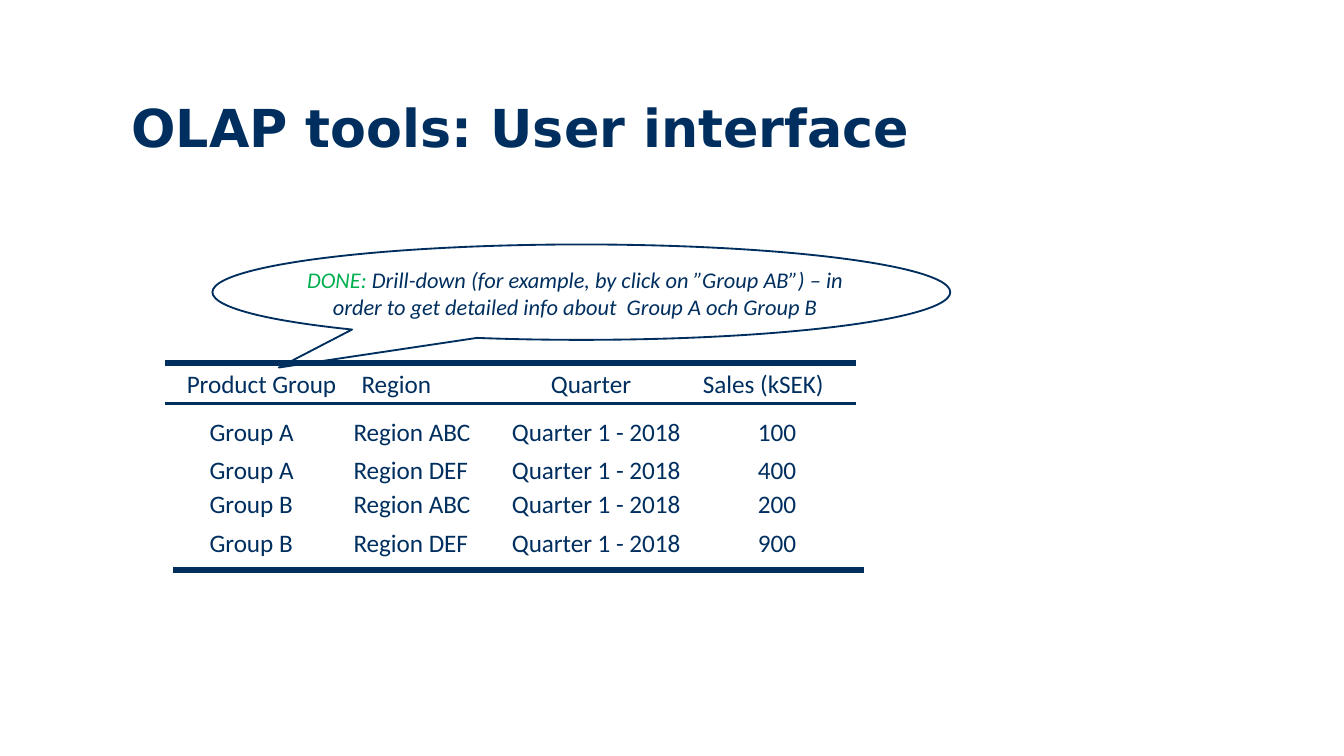
"""Build the OLAP user interface slide with a sales table and a drill-down callout."""

from dataclasses import dataclass

from lxml.etree import SubElement
from pptx import Presentation
from pptx.dml.color import RGBColor
from pptx.enum.shapes import MSO_CONNECTOR, MSO_SHAPE
from pptx.enum.text import MSO_ANCHOR, PP_ALIGN
from pptx.oxml.ns import qn
from pptx.slide import Slide
from pptx.util import Pt


@dataclass(frozen=True)
class Theme:
    ink: RGBColor = RGBColor(0x00, 0x2F, 0x5F)
    rule: RGBColor = RGBColor(0x00, 0x2E, 0x5D)
    done: RGBColor = RGBColor(0x00, 0xB0, 0x50)
    paper: RGBColor = RGBColor(0xFF, 0xFF, 0xFF)
    title_font: str = "DejaVu Sans"
    body_font: str = "Calibri"
    title_size: float = 28
    table_size: float = 13.5
    callout_size: float = 12


@dataclass(frozen=True)
class Box:
    left: float
    top: float
    width: float
    height: float

    def lengths(self) -> tuple[Pt, Pt, Pt, Pt]:
        return Pt(self.left), Pt(self.top), Pt(self.width), Pt(self.height)


@dataclass(frozen=True)
class Run:
    text: str
    color: RGBColor
    size: float
    font: str
    bold: bool = False
    italic: bool = False


@dataclass(frozen=True)
class Column:
    heading: str
    values: tuple[str, ...]
    width: float
    heading_indent: float
    value_indent: float


@dataclass(frozen=True)
class Rule:
    left: float
    top: float
    weight: float


THEME = Theme()
TABLE_LEFT, TABLE_TOP = 88.6, 194.4
ROW_HEIGHTS = (20.1, 25.9, 20.2, 18, 20.9)
COLUMNS = (
    Column("Product Group", ("Group A", "Group A", "Group B", "Group B"), 93.4, 11.5, 23.7),
    Column("Region", ("Region ABC", "Region DEF") * 2, 85, 11.7, 7.4),
    Column("Quarter", ("Quarter 1 - 2018",) * 4, 102.4, 28.2, 7.3),
    Column("Sales (kSEK)", ("100", "400", "200", "900"), 89.2, 7.2, 36.7),
)
RULE_WIDTH = 370
RULES = (Rule(88.6, 194.4, 3), Rule(92.9, 305.3, 3), Rule(88.6, 216, 1.5))


def write_runs(paragraph, runs: tuple[Run, ...]) -> None:
    for item in runs:
        run = paragraph.add_run()
        run.text = item.text
        run.font.name = item.font
        run.font.size = Pt(item.size)
        run.font.bold = item.bold
        run.font.italic = item.italic
        run.font.color.rgb = item.color


def add_text(slide: Slide, box: Box, runs: tuple[Run, ...], alignment: PP_ALIGN) -> None:
    text_frame = slide.shapes.add_textbox(*box.lengths()).text_frame
    text_frame.word_wrap = True
    text_frame.vertical_anchor = MSO_ANCHOR.MIDDLE
    paragraph = text_frame.paragraphs[0]
    paragraph.alignment = alignment
    write_runs(paragraph, runs)


def add_sales_table(slide: Slide) -> None:
    box = Box(TABLE_LEFT, TABLE_TOP, sum(column.width for column in COLUMNS), sum(ROW_HEIGHTS))
    table = slide.shapes.add_table(len(ROW_HEIGHTS), len(COLUMNS), *box.lengths()).table
    table.first_row = True
    table.horz_banding = False
    for row, height in zip(table.rows, ROW_HEIGHTS):
        row.height = Pt(height)
    for column_index, column in enumerate(COLUMNS):
        table.columns[column_index].width = Pt(column.width)
        for row_index, text in enumerate((column.heading, *column.values)):
            cell = table.cell(row_index, column_index)
            indent = column.value_indent if row_index else column.heading_indent
            cell.margin_left = Pt(indent)
            cell.margin_right = cell.margin_top = cell.margin_bottom = Pt(0)
            cell.vertical_anchor = MSO_ANCHOR.BOTTOM
            cell.fill.background()
            run = Run(text, THEME.ink, THEME.table_size, THEME.body_font)
            write_runs(cell.text_frame.paragraphs[0], (run,))


def add_callout(slide: Slide, box: Box) -> None:
    shape = slide.shapes.add_shape(MSO_SHAPE.OVAL_CALLOUT, *box.lengths())
    shape.shadow.inherit = False
    shape.adjustments[0] = -0.41
    shape.adjustments[1] = 0.79
    shape.fill.solid()
    shape.fill.fore_color.rgb = THEME.paper
    shape.line.color.rgb = THEME.ink
    shape.line.width = Pt(1)


def add_rule(slide: Slide, rule: Rule) -> None:
    connector = slide.shapes.add_connector(
        MSO_CONNECTOR.STRAIGHT,
        Pt(rule.left), Pt(rule.top), Pt(rule.left + RULE_WIDTH), Pt(rule.top),
    )
    connector.line.color.rgb = THEME.rule
    connector.line.width = Pt(rule.weight)
    SubElement(connector._element.spPr, qn("a:effectLst"))


def main() -> None:
    presentation = Presentation()
    presentation.slide_width, presentation.slide_height = Pt(720), Pt(405)
    slide = presentation.slides.add_slide(presentation.slide_layouts[6])

    title = Run("OLAP tools: User interface", THEME.ink, THEME.title_size, THEME.title_font, bold=True)
    add_text(slide, Box(63.4, 44.6, 469.4, 46.8), (title,), PP_ALIGN.LEFT)
    add_sales_table(slide)
    add_callout(slide, Box(113.8, 131, 395.3, 51.1))
    for rule in RULES:
        add_rule(slide, rule)
    message = (
        ("DONE: ", THEME.done),
        ("Drill-down (for example, by click on ”Group AB”) – in order to get "
         "detailed info about  Group A och Group B", THEME.ink),
    )
    runs = tuple(
        Run(text, color, THEME.callout_size, THEME.body_font, italic=True) for text, color in message
    )
    add_text(slide, Box(149.8, 139, 316.8, 36), runs, PP_ALIGN.CENTER)
    presentation.save("out.pptx")


if __name__ == "__main__":
    main()
